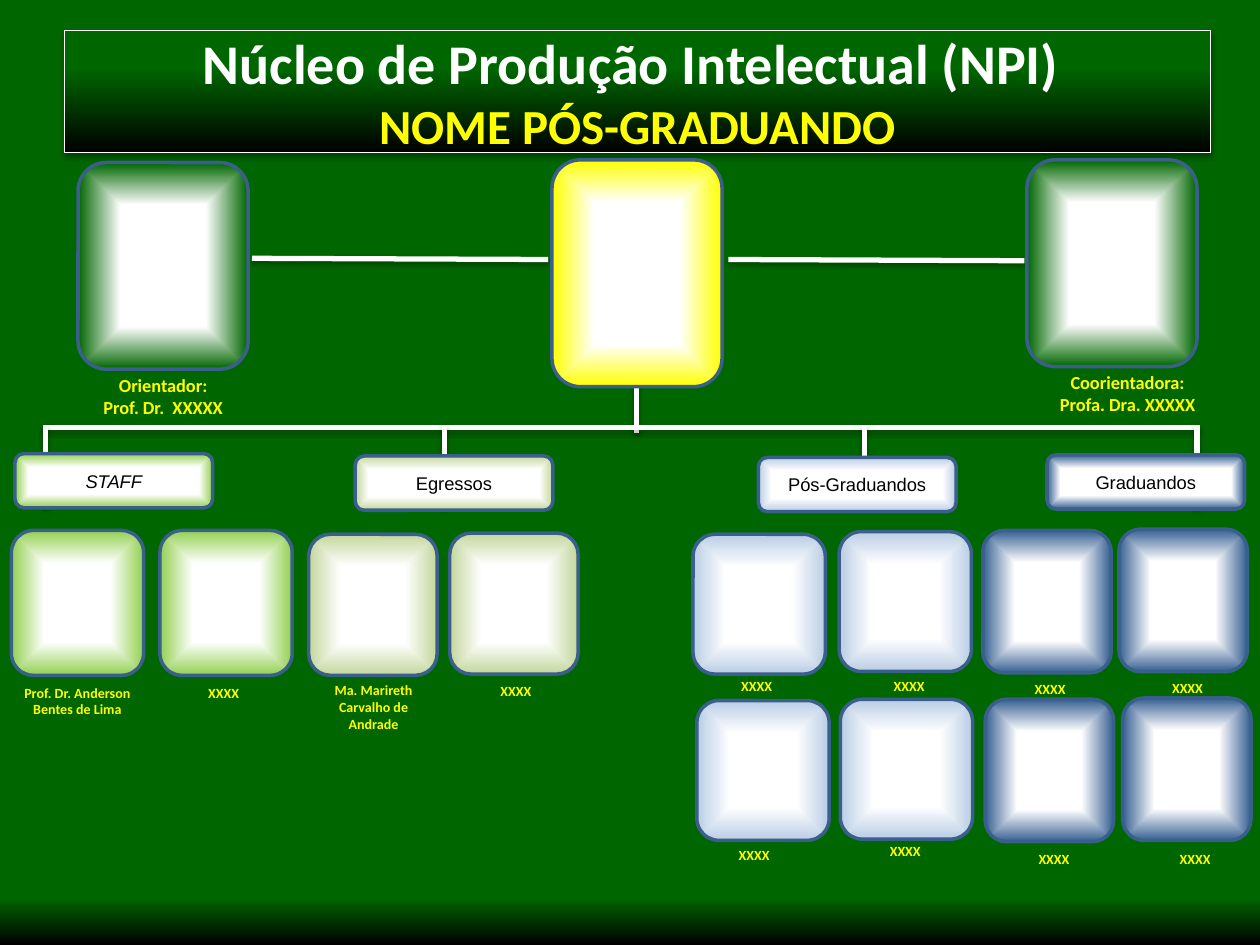
import pptx
import pptx.dml.color
import pptx.enum.shapes
import pptx.enum.text
import pptx.oxml
import pptx.oxml.ns
import pptx.util
import lxml.etree

Pt = pptx.util.Pt
RGBColor = pptx.dml.color.RGBColor
SHAPES = pptx.enum.shapes.MSO_SHAPE
ANCHOR = pptx.enum.text.MSO_ANCHOR

WHITE = RGBColor(0xFF, 0xFF, 0xFF)
BLACK = RGBColor(0x00, 0x00, 0x00)
YELLOW = RGBColor(0xFF, 0xFF, 0x00)
DARK_GREEN = RGBColor(0x00, 0x66, 0x00)
LIME = RGBColor(0x92, 0xD0, 0x50)
OLIVE = RGBColor(0xC3, 0xD6, 0x9B)
PALE_BLUE = RGBColor(0xB9, 0xCD, 0xE5)
NAVY = RGBColor(0x37, 0x60, 0x92)
BORDER = RGBColor(0x3A, 0x5F, 0x8C)

DOWNWARD = '<a:lin ang="5400000" scaled="0"/>'
FROM_CENTRE = (
    '<a:path path="rect"><a:fillToRect l="50000" t="50000" r="50000" b="50000"/></a:path>'
)

LABEL_SIZE = (113, 31)
CAPTION_SIZE = (75.6, 17.3)

CONNECTIONS = [
    (363.6, 189.4, 363.6, 247.7),
    (144, 147.6, 313.2, 148.3),
    (416.2, 148.3, 585.4, 149),
    (24.5, 244.1, 684, 244.1),
]
DROP_POSITIONS = [25.9, 254.2, 493.9, 684]

LEADERS = [
    (44.6, 92.9, 97.2, 118.1, DARK_GREEN),
    (315.4, 91.4, 97.2, 129.6, YELLOW),
    (586.8, 91.4, 97.2, 118.1, DARK_GREEN),
]

# name, colour, italic, label position, card size, cards, captions
GROUPS = [
    ("STAFF", LIME, True, (8.6, 259.2), (75.6, 82.8),
     [(6.5, 303.1), (91.4, 303.1)],
     [(2.2, 387.4, 84.2, 26.6, "Prof. Dr. Anderson Bentes de Lima"),
      (90, 387.4, *CAPTION_SIZE, "XXXX")]),
    ("Egressos", OLIVE, False, (203, 260.6), (73.4, 80.6),
     [(176.4, 305.3), (257, 304.6)],
     [(175.7, 385.9, 75.6, 36, "Ma. Marireth Carvalho de Andrade"),
      (257, 386.6, *CAPTION_SIZE, "XXXX")]),
    ("Pós-Graduandos", PALE_BLUE, False, (433.4, 261.4), (75.6, 79.9),
     [(396, 305.3), (479.5, 303.8), (398.2, 400.3), (480.2, 399.6)],
     [(left, top, *CAPTION_SIZE, "XXXX") for left, top in
      [(394.6, 383.8), (481.7, 383.8), (393.1, 480.2), (479.5, 478.1)]]),
    ("Graduandos", NAVY, False, (598.3, 259.9), (73.4, 81.4),
     [(561.6, 303.1), (639.4, 302.4), (563, 399.6), (641.5, 398.9)],
     [(left, top, *CAPTION_SIZE, "XXXX") for left, top in
      [(562.3, 385.2), (640.8, 384.5), (564.5, 482.4), (645.1, 482.4)]]),
]


def parse_drawing(markup):
    namespace = pptx.oxml.ns.nsdecls("a")
    return pptx.oxml.parse_xml(f"<a:root {namespace}>{markup}</a:root>")


def set_gradient(fill, owner, stops, direction):
    fill.gradient()
    gradient = owner.xpath(".//a:gradFill")[0]
    for child in list(gradient):
        gradient.remove(child)
    marks = "".join(
        f'<a:gs pos="{position * 1000}"><a:srgbClr val="{colour}"/></a:gs>'
        for position, colour in stops
    )
    for child in list(parse_drawing(f"<a:gsLst>{marks}</a:gsLst>{direction}")):
        gradient.append(child)


def add_shadow(shape):
    properties = shape._element.spPr
    for old in properties.findall(pptx.oxml.ns.qn("a:effectLst")):
        properties.remove(old)
    effects = parse_drawing(
        '<a:effectLst><a:outerShdw blurRad="40000" dist="23000" dir="5400000" rotWithShape="0">'
        '<a:srgbClr val="000000"><a:alpha val="35000"/></a:srgbClr>'
        "</a:outerShdw></a:effectLst>"
    )
    properties.append(effects[0])


def write_text(frame, lines, font, bold=False, italic=False):
    frame.word_wrap = True
    for index, (text, size, colour) in enumerate(lines):
        para = frame.paragraphs[0] if index == 0 else frame.add_paragraph()
        para.alignment = pptx.enum.text.PP_ALIGN.CENTER
        span = para.add_run()
        span.text = text
        span.font.name = font
        span.font.size = Pt(size)
        span.font.bold = bold
        span.font.italic = italic
        span.font.color.rgb = colour


def add_line(page, start_x, start_y, end_x, end_y):
    line = page.shapes.add_connector(
        pptx.enum.shapes.MSO_CONNECTOR.STRAIGHT, Pt(start_x), Pt(start_y), Pt(end_x), Pt(end_y)
    )
    line.line.color.rgb = WHITE
    line.line.width = Pt(3)
    add_shadow(line)


def add_box(page, kind, left, top, width, height, stops, direction, border, weight):
    box = page.shapes.add_shape(kind, Pt(left), Pt(top), Pt(width), Pt(height))
    box.shadow.inherit = False
    set_gradient(box.fill, box._element.spPr, stops, direction)
    box.line.color.rgb = border
    box.line.width = Pt(weight)
    box.text_frame.vertical_anchor = ANCHOR.MIDDLE
    return box


def add_card(page, left, top, width, height, colour):
    stops = [(50, WHITE), (100, colour)]
    return add_box(page, SHAPES.ROUNDED_RECTANGLE, left, top, width, height,
                   stops, FROM_CENTRE, BORDER, 2)


def add_caption(page, left, top, width, height, lines, size):
    box = page.shapes.add_textbox(Pt(left), Pt(top), Pt(width), Pt(height))
    write_text(box.text_frame, [(text, size, YELLOW) for text in lines], "Calibri", bold=True)
    box.text_frame.auto_size = pptx.enum.text.MSO_AUTO_SIZE.SHAPE_TO_FIT_TEXT


def add_title(page):
    stops = [(0, DARK_GREEN), (31, DARK_GREEN), (100, BLACK)]
    box = add_box(page, SHAPES.RECTANGLE, 36.7, 17.3, 655.2, 69.8,
                  stops, DOWNWARD, WHITE, 0.75)
    add_shadow(box)
    lines = [
        ("Núcleo de Produção Intelectual (NPI) ", 32, WHITE),
        ("NOME PÓS-GRADUANDO", 28, YELLOW),
    ]
    write_text(box.text_frame, lines, "Calibri", bold=True)


def add_group(page, name, colour, italic, label_place, card_size, cards, captions):
    label = add_card(page, *label_place, *LABEL_SIZE, colour)
    write_text(label.text_frame, [(name, 10.5, BLACK)], "Arial", italic=italic)
    for place in cards:
        add_card(page, *place, *card_size, colour)
    for left, top, width, height, text in captions:
        add_caption(page, left, top, width, height, [text], 8)


def main():
    deck = pptx.Presentation()
    deck.slide_width = Pt(720)
    deck.slide_height = Pt(540)
    page = deck.slides.add_slide(deck.slide_layouts[6])
    set_gradient(page.background.fill, page._element,
                 [(95, DARK_GREEN), (100, BLACK)], DOWNWARD)
    for connection in CONNECTIONS:
        add_line(page, *connection)
    for position in DROP_POSITIONS:
        add_line(page, position, 243, position, 290)
    add_title(page)
    for leader in LEADERS:
        add_card(page, *leader)
    add_caption(page, -3.6, 210.2, 193.7, 32.4, ["Orientador:", "Prof. Dr.  XXXXX"], 10.5)
    add_caption(page, 555.8, 208.8, 177.1, 45.4, ["Coorientadora:", "Profa. Dra. XXXXX"], 10.5)
    for group in GROUPS:
        add_group(page, *group)
    deck.save("out.pptx")


if __name__ == "__main__":
    main()
